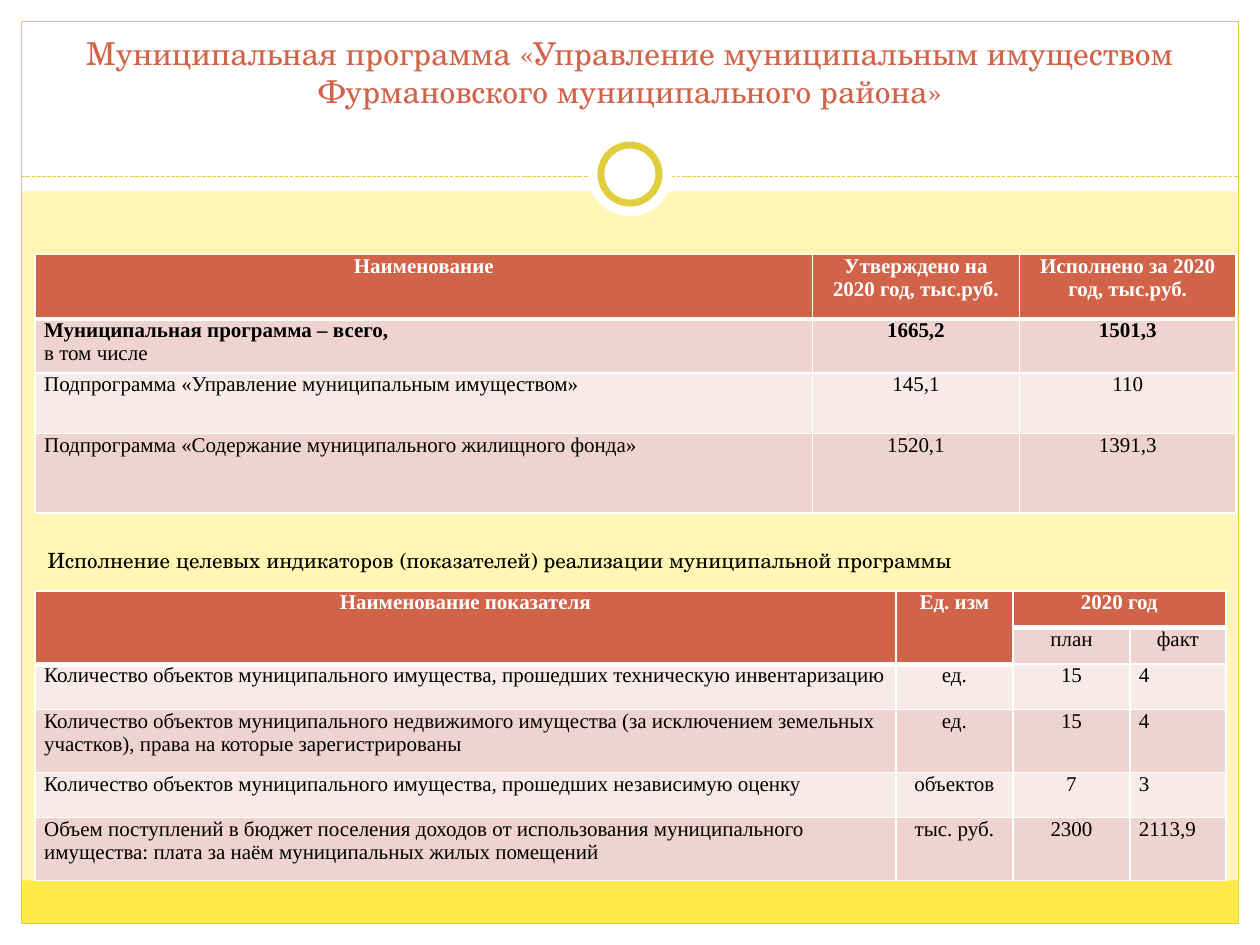
from lxml.etree import SubElement
from pptx import Presentation
from pptx.dml.color import RGBColor
from pptx.enum.dml import MSO_LINE
from pptx.enum.shapes import MSO_CONNECTOR, MSO_SHAPE
from pptx.enum.text import MSO_ANCHOR, MSO_AUTO_SIZE, PP_ALIGN
from pptx.oxml.ns import qn
from pptx.util import Cm, Pt

W, H, EDGE, LEFT = 25.4, 19.05, 0.43, 0.71
WHITE, BLACK, RED, GOLD = "FFFFFF", "000000", "D16349", "E1CE3F"
BANDS = "F7EAE9", "EED3D0"
SERIF, SCHOOL = "Times New Roman", "TeX Gyre Schola"
L, C, J = PP_ALIGN.LEFT, PP_ALIGN.CENTER, PP_ALIGN.JUSTIFY

TITLE = "Муниципальная программа «Управление муниципальным имуществом Фурмановского муниципального района»"
SUBTITLE = "Исполнение целевых индикаторов (показателей) реализации муниципальной программы"

BUDGET = dict(
    top=5.13, cols=[15.67, 4.17, 4.37], rows=[1.3, 1.09, 1.22, 1.6],
    aligns=[J, C, C], header={(0, 0), (0, 1), (0, 2)}, merges=[],
    bold={"Муниципальная программа – всего,", "1665,2", "1501,3"},
    cells=[
        ["Наименование", "Утверждено на 2020 год, тыс.руб.", "Исполнено за 2020 год, тыс.руб."],
        ["Муниципальная программа – всего,\nв том числе", "1665,2", "1501,3"],
        ["Подпрограмма «Управление муниципальным имуществом»", "145,1", "110"],
        ["Подпрограмма «Содержание муниципального жилищного фонда»", "1520,1", "1391,3"],
    ])
INDICATORS = dict(
    top=11.91, cols=[17.35, 2.36, 2.36, 1.93], rows=[0.74, 0.74, 0.91, 1.27, 0.91, 1.27],
    aligns=[L, C, C, L], header={(0, 0), (0, 1), (0, 2), (0, 3), (1, 0), (1, 1)},
    merges=[(0, 0, 1, 0), (0, 1, 1, 1), (0, 2, 0, 3)], bold=set(),
    cells=[
        ["Наименование показателя", "Ед. изм", "2020 год", ""],
        ["", "", "план", "факт"],
        ["Количество объектов муниципального имущества, прошедших техническую инвентаризацию", "ед.", "15", "4"],
        ["Количество объектов муниципального недвижимого имущества (за исключением земельных участков), права на которые зарегистрированы", "ед.", "15", "4"],
        ["Количество объектов муниципального имущества, прошедших независимую оценку", "объектов", "7", "3"],
        ["Объем поступлений в бюджет поселения доходов от использования муниципального имущества: плата за наём муниципальных жилых помещений", "тыс. руб.", "2300", "2113,9"],
    ])


def paint(fill, color):
    fill.solid()
    fill.fore_color.rgb = RGBColor.from_string(color)


def style(p, size, font, color, align, bold=False):
    p.alignment = align
    p.font.size, p.font.name, p.font.bold = Pt(size), font, bold
    paint(p.font.fill, color)


def add_shape(s, x, y, w, h, fill=None, line=None, width=0.75, kind=MSO_SHAPE.RECTANGLE):
    sp = s.shapes.add_shape(kind, Cm(x), Cm(y), Cm(w), Cm(h))
    sp.shadow.inherit = False
    if fill:
        paint(sp.fill, fill)
    else:
        sp.fill.background()
    if line:
        paint(sp.line.fill, line)
        sp.line.width = Pt(width)
    else:
        sp.line.fill.background()


def add_circle(s, d, fill, line=None, width=0.75):
    add_shape(s, (W - d) / 2, 3.51 - d / 2, d, d, fill, line, width, MSO_SHAPE.OVAL)


def add_frame(s):
    for box in [(0, H - EDGE, W, EDGE), (0, 0, W, 3.86),
                (0, 0, EDGE, H), (W - EDGE, 0, EDGE, H)]:
        add_shape(s, *box, WHITE)
    add_shape(s, EDGE, 17.75, W - 2 * EDGE, 0.87, "FFE947")
    add_shape(s, EDGE, EDGE, W - 2 * EDGE, H - 2 * EDGE, line=GOLD)
    rule = s.shapes.add_connector(MSO_CONNECTOR.STRAIGHT, Cm(EDGE), Cm(3.56), Cm(W - EDGE), Cm(3.56))
    paint(rule.line.fill, GOLD)
    rule.line.width = Pt(0.75)
    rule.line.dash_style = MSO_LINE.SQUARE_DOT
    SubElement(rule.element.spPr, qn("a:effectLst"))
    add_circle(s, 1.7, WHITE)
    add_circle(s, 1.17, WHITE, GOLD, 4)


def set_borders(cell, top, bottom):
    tcPr = cell._tc.get_or_add_tcPr()
    for side, width in zip("LRTB", (1, 1, top, bottom)):
        ln = SubElement(tcPr, qn("a:ln" + side), w=str(Pt(width)))
        SubElement(SubElement(ln, qn("a:solidFill")), qn("a:srgbClr"), val=WHITE)


def add_table(s, top, cols, rows, aligns, header, merges, bold, cells):
    table = s.shapes.add_table(len(rows), len(cols), Cm(LEFT), Cm(top),
                               Cm(sum(cols)), Cm(sum(rows))).table
    for col, w in zip(table.columns, cols):
        col.width = Cm(w)
    for row, h in zip(table.rows, rows):
        row.height = Cm(h)
    for r, texts in enumerate(cells):
        for c, text in enumerate(texts):
            cell, head = table.cell(r, c), (r, c) in header
            cell.margin_left = cell.margin_right = Cm(0.18)
            cell.margin_top = cell.margin_bottom = 0
            below_head = not head and (r - 1, c) in header
            set_borders(cell, 3 if below_head else 1, 3 if head else 1)
            paint(cell.fill, RED if head else BANDS[r % 2])
            cell.text_frame.text = text
            for p in cell.text_frame.paragraphs:
                style(p, 12, SERIF, WHITE if head else BLACK,
                      C if head or r == 1 and c else aligns[c], head or p.text in bold)
    for r1, c1, r2, c2 in merges:
        table.cell(r1, c1).merge(table.cell(r2, c2))


def add_title(s):
    sp = s.shapes.title
    sp.left, sp.top, sp.width, sp.height = Cm(0.85), Cm(0.64), Cm(23.7), Cm(1.7)
    tf = sp.text_frame
    tf.text = TITLE
    tf.auto_size = MSO_AUTO_SIZE.NONE
    tf.vertical_anchor = MSO_ANCHOR.BOTTOM
    style(tf.paragraphs[0], 18, SCHOOL, RED, C)
    sp.element.getparent().append(sp.element)


def add_subtitle(s):
    tf = s.shapes.add_textbox(Cm(LEFT), Cm(10.92), Cm(23.62), Cm(1.7)).text_frame
    tf.word_wrap = True
    tf.text = SUBTITLE
    p = tf.paragraphs[0]
    style(p, 12, SCHOOL, BLACK, L)
    p.space_before = Pt(2.4)


def main():
    prs = Presentation()
    prs.slide_width, prs.slide_height = Cm(W), Cm(H)
    s = prs.slides.add_slide(prs.slide_layouts[5])
    paint(s.background.fill, "FFF6B5")
    add_frame(s)
    add_title(s)
    add_table(s, **BUDGET)
    add_subtitle(s)
    add_table(s, **INDICATORS)
    prs.save("out.pptx")


if __name__ == "__main__":
    main()
